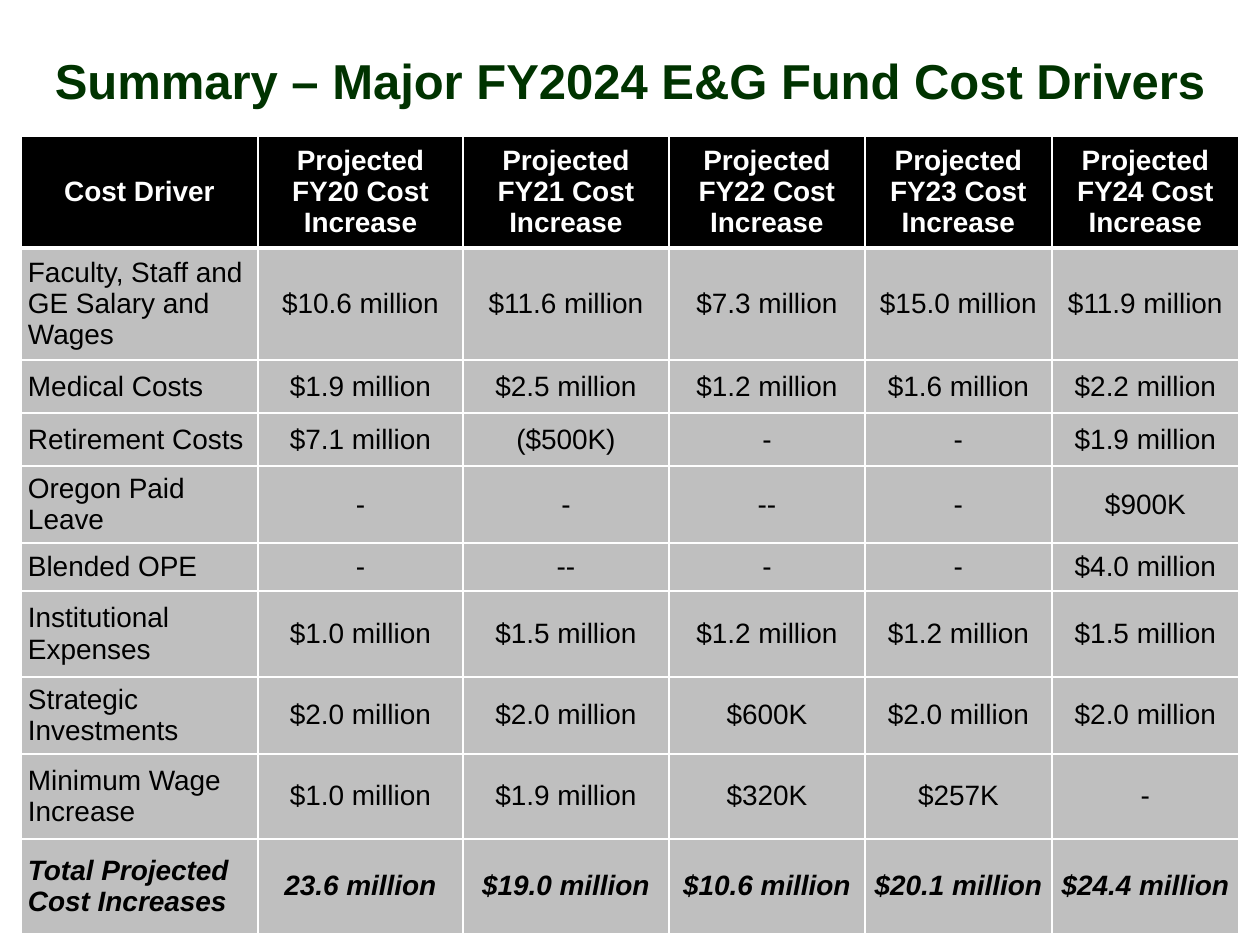
from dataclasses import dataclass

from lxml.etree import SubElement
from pptx import Presentation
from pptx.dml.color import RGBColor
from pptx.enum.text import MSO_VERTICAL_ANCHOR as Anchor, PP_PARAGRAPH_ALIGNMENT as Align
from pptx.oxml.ns import qn
from pptx.util import Emu, Pt

PX_PER_INCH = 126
COLORS = {
    "title": "003300",
    "header": "000000",
    "body": "BFBFBF",
    "ink": "000000",
    "white": "FFFFFF",
}
FONT = "Arial"
COLUMN_WIDTHS = [237, 205, 206, 196, 187, 187]
YEARS = range(20, 25)


@dataclass(frozen=True)
class CostRow:
    height: int
    driver: str
    amounts: list[str]
    is_header: bool = False
    is_total: bool = False


COST_ROWS = [
    CostRow(112, "Cost Driver", [f"Projected FY{year} Cost Increase" for year in YEARS], is_header=True),
    CostRow(112, "Faculty, Staff and GE Salary and Wages",
            ["$10.6 million", "$11.6 million", "$7.3 million", "$15.0 million", "$11.9 million"]),
    CostRow(53, "Medical Costs",
            ["$1.9 million", "$2.5 million", "$1.2 million", "$1.6 million", "$2.2 million"]),
    CostRow(53, "Retirement Costs", ["$7.1 million", "($500K)", "-", "-", "$1.9 million"]),
    CostRow(77, "Oregon Paid Leave", ["-", "-", "--", "-", "$900K"]),
    CostRow(48, "Blended OPE", ["-", "--", "-", "-", "$4.0 million"]),
    CostRow(86, "Institutional Expenses",
            ["$1.0 million", "$1.5 million", "$1.2 million", "$1.2 million", "$1.5 million"]),
    CostRow(77, "Strategic Investments",
            ["$2.0 million", "$2.0 million", "$600K", "$2.0 million", "$2.0 million"]),
    CostRow(85, "Minimum Wage Increase",
            ["$1.0 million", "$1.9 million", "$320K", "$257K", "-"]),
    CostRow(95, "Total Projected Cost Increases",
            ["23.6 million", "$19.0 million", "$10.6 million", "$20.1 million", "$24.4 million"],
            is_total=True),
]


def px(length: int) -> Emu:
    return Emu(round(length * 914400 / PX_PER_INCH))


def write_text(frame, text: str, *, size: int = 16, color: str = "ink", bold: bool = False,
               italic: bool = False, align=Align.CENTER) -> None:
    frame.word_wrap = True
    paragraph = frame.paragraphs[0]
    paragraph.alignment = align
    run = paragraph.add_run()
    run.text = text
    run.font.name = FONT
    run.font.size = Pt(size)
    run.font.bold = bold
    run.font.italic = italic
    run.font.color.rgb = RGBColor.from_string(COLORS[color])


def add_borders(cell, top: int = 1, bottom: int = 1) -> None:
    properties = cell._tc.get_or_add_tcPr()
    for side, width in (("L", 1), ("R", 1), ("T", top), ("B", bottom)):
        border = SubElement(properties, qn(f"a:ln{side}"), w=str(Pt(width)))
        fill = SubElement(border, qn("a:solidFill"))
        SubElement(fill, qn("a:srgbClr"), val=COLORS["white"])


def fill_cell(cell, text: str, cost: CostRow, align, top: int, bottom: int) -> None:
    cell.vertical_anchor = Anchor.MIDDLE
    cell.margin_left = cell.margin_right = px(7)
    cell.margin_top = cell.margin_bottom = px(4)
    add_borders(cell, top, bottom)
    cell.fill.solid()
    cell.fill.fore_color.rgb = RGBColor.from_string(COLORS["header" if cost.is_header else "body"])
    write_text(cell.text_frame, text, color="white" if cost.is_header else "ink",
               bold=cost.is_header or cost.is_total, italic=cost.is_total, align=align)


def add_cost_table(slide, left: int, top: int) -> None:
    table = slide.shapes.add_table(
        len(COST_ROWS), len(COLUMN_WIDTHS), px(left), px(top),
        px(sum(COLUMN_WIDTHS)), px(sum(cost.height for cost in COST_ROWS))).table
    for column, width in zip(table.columns, COLUMN_WIDTHS):
        column.width = px(width)
    for index, (row, cost) in enumerate(zip(table.rows, COST_ROWS)):
        row.height = px(cost.height)
        top_width = 3 if index == 1 else 1
        bottom_width = 3 if cost.is_header else 1
        for position, (cell, text) in enumerate(zip(row.cells, [cost.driver, *cost.amounts])):
            align = Align.LEFT if position == 0 and not cost.is_header else Align.CENTER
            fill_cell(cell, text, cost, align, top_width, bottom_width)


def add_title(slide, text: str) -> None:
    title = slide.shapes.add_textbox(px(0), px(22), px(1260), px(115)).text_frame
    title.vertical_anchor = Anchor.MIDDLE
    write_text(title, text, size=28, color="title", bold=True)


def main() -> None:
    deck = Presentation()
    deck.slide_width, deck.slide_height = px(1260), px(945)
    slide = deck.slides.add_slide(deck.slide_layouts[6])
    add_cost_table(slide, 21, 136)
    add_title(slide, "Summary – Major FY2024 E&G Fund Cost Drivers")
    deck.save("out.pptx")


if __name__ == "__main__":
    main()
